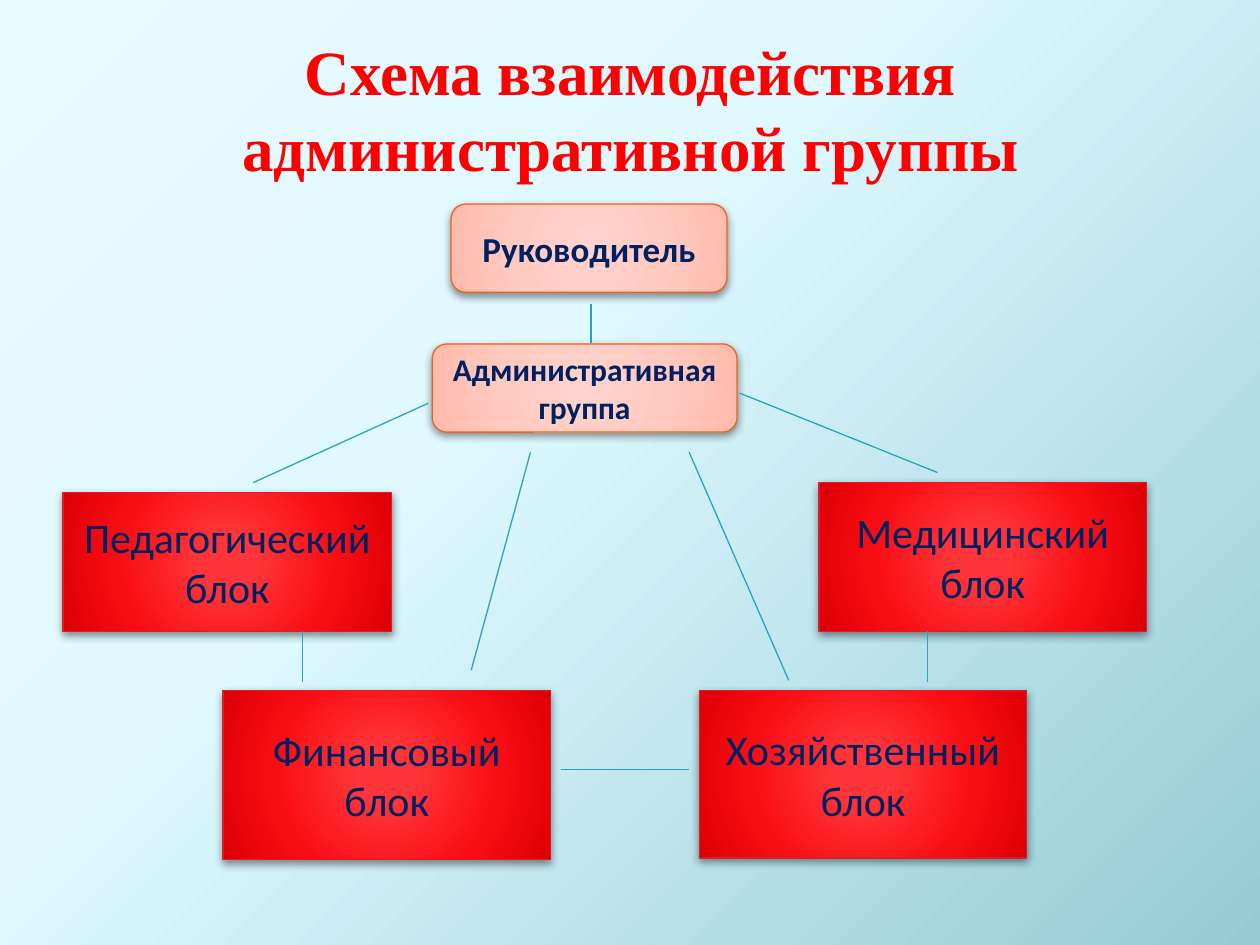
from lxml.etree import SubElement
from pptx import Presentation
from pptx.dml.color import RGBColor
from pptx.enum.shapes import MSO_CONNECTOR, MSO_SHAPE
from pptx.enum.text import MSO_ANCHOR, MSO_AUTO_SIZE, PP_ALIGN
from pptx.oxml.ns import qn
from pptx.util import Inches, Pt

# Content
HEADING = "Схема взаимодействия административной группы"
BACKDROP = [(0, "E9FBFF"), (40, "DFF9FF"), (100, "96CBD6")]

LEADER = dict(
    geometry=MSO_SHAPE.ROUNDED_RECTANGLE, outline="EB641B", bold=True,
    stops=[(0, "FFD4CD"), (50, "FFCBC1"), (97, "FFBBAE"), (100, "FFB6A8")])
BLOCK = dict(
    geometry=MSO_SHAPE.FLOWCHART_PROCESS, outline="DA1F28", bold=False,
    stops=[(0, "FF373A"), (15, "FF3539"), (62, "F80D13"), (97, "DF0007"),
           (100, "CA000A")])

# Text, style, text size, (left, top, width, height) in inches
UNITS = [
    ("Руководитель", LEADER, 20, (3.58, 1.62, 2.19, 0.7)),
    ("Административная группа", LEADER, 18, (3.43, 2.73, 2.42, 0.7)),
    ("Педагогический блок", BLOCK, 24, (0.5, 3.91, 2.61, 1.1)),
    ("Финансовый блок", BLOCK, 24, (1.77, 5.48, 2.6, 1.34)),
    ("Хозяйственный блок", BLOCK, 24, (5.55, 5.48, 2.6, 1.33)),
    ("Медицинский блок", BLOCK, 24, (6.5, 3.83, 2.6, 1.18)),
]

# From x, y to x, y in inches
LINKS = [
    (4.69, 2.41, 4.69, 2.72),  # head to group
    (3.4, 3.2, 2.01, 3.83),    # group to teaching
    (4.45, 6.11, 5.47, 6.11),  # finance to household
    (5.47, 3.59, 6.26, 5.4),   # group to household
    (4.21, 3.59, 3.74, 5.32),  # group to finance
    (5.87, 3.12, 7.44, 3.75),  # group to medical
    (2.4, 5.01, 2.4, 5.41),    # teaching to finance
    (7.36, 5.01, 7.36, 5.41),  # medical to household
]


def rgb(value):
    return RGBColor.from_string(value)


def add_radial_fill(fill, properties, stops, focus):
    """Swap a solid fill for a circular gradient around focus (l, t, r, b in %)."""
    fill.solid()
    solid = properties.find(qn("a:solidFill"))
    gradient = SubElement(properties, qn("a:gradFill"), rotWithShape="1")
    properties.replace(solid, gradient)
    stop_list = SubElement(gradient, qn("a:gsLst"))
    for position, color in stops:
        stop = SubElement(stop_list, qn("a:gs"), pos=str(position * 1000))
        SubElement(stop, qn("a:srgbClr"), val=color)
    circle = SubElement(gradient, qn("a:path"), path="circle")
    edges = {side: str(share * 1000) for side, share in zip("ltrb", focus)}
    SubElement(circle, qn("a:fillToRect"), **edges)


def add_soft_shadow(shape):
    shape.shadow.inherit = False
    effects = shape.element.spPr.find(qn("a:effectLst"))
    shadow = SubElement(
        effects, qn("a:outerShdw"), blurRad=str(Pt(5)), dist=str(Pt(2)),
        dir="5400000", rotWithShape="0")
    color = SubElement(shadow, qn("a:srgbClr"), val="000000")
    SubElement(color, qn("a:alpha"), val="43000")


def write(frame, text, font_name, size, color, bold):
    frame.word_wrap = True
    frame.text = text
    paragraph = frame.paragraphs[0]
    paragraph.alignment = PP_ALIGN.CENTER
    font = paragraph.font
    font.name, font.size, font.bold = font_name, Pt(size), bold
    font.color.rgb = rgb(color)


def add_unit(slide, text, style, size, box):
    unit = slide.shapes.add_shape(style["geometry"], *map(Inches, box))
    add_radial_fill(unit.fill, unit.element.spPr, style["stops"], (50,) * 4)
    unit.line.color.rgb = rgb(style["outline"])
    unit.line.width = Pt(0.75)
    add_soft_shadow(unit)
    unit.text_frame.vertical_anchor = MSO_ANCHOR.MIDDLE
    write(unit.text_frame, text, "Calibri", size, "002060", style["bold"])


def add_link(slide, ends):
    link = slide.shapes.add_connector(MSO_CONNECTOR.STRAIGHT, *map(Inches, ends))
    link.line.color.rgb = rgb("2DA2BF")
    link.line.width = Pt(0.75)
    SubElement(link.element.spPr, qn("a:effectLst"))


def main():
    deck = Presentation()
    deck.slide_width, deck.slide_height = Inches(10), Inches(7.5)
    slide = deck.slides.add_slide(deck.slide_layouts[5])

    # Background
    backdrop = slide.background.fill
    backdrop.solid()
    add_radial_fill(backdrop, slide.element.find(".//" + qn("p:bgPr")),
                    BACKDROP, (-24, -20, 124, 120))

    # Title
    title = slide.shapes.title
    title.left, title.top = Inches(0.28), Inches(0.21)
    title.width, title.height = Inches(9.45), Inches(1.31)
    title.text_frame.vertical_anchor = MSO_ANCHOR.TOP
    title.text_frame.auto_size = MSO_AUTO_SIZE.SHAPE_TO_FIT_TEXT
    write(title.text_frame, HEADING, "Times New Roman", 36, "FF0000", True)

    # Chart of units and their links
    for unit in UNITS:
        add_unit(slide, *unit)
    for ends in LINKS:
        add_link(slide, ends)

    deck.save("out.pptx")


if __name__ == "__main__":
    main()
